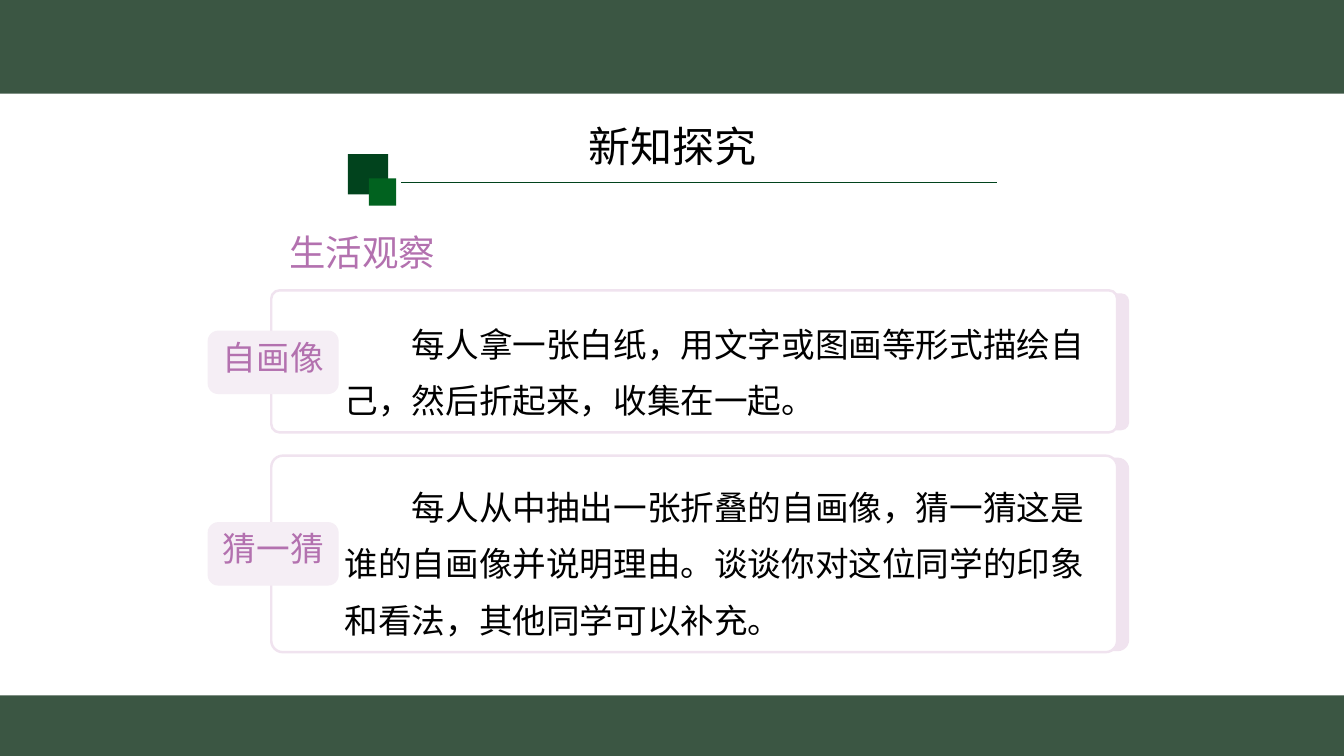
import pptx
import pptx.dml.color
import pptx.enum.shapes
import pptx.enum.text
import pptx.oxml.ns
import pptx.util
from lxml import etree

Inches, Pt = pptx.util.Inches, pptx.util.Pt
SHAPE = pptx.enum.shapes.MSO_SHAPE
ALIGN = pptx.enum.text.PP_ALIGN

COLORS = {
    "band": "3B5643", "dark": "01431D", "green": "01621F", "white": "FFFFFF",
    "black": "000000", "lilac": "F0E3EF", "tag": "F5EEF5", "purple": "B371AF",
}
CJK = "Noto Sans CJK SC"
WIDTH, HEIGHT = 13.33, 7.5


def rgb(name):
    return pptx.dml.color.RGBColor.from_string(COLORS[name])


class SlideBuilder:
    """Holds the shared style and the slide being filled."""

    def __init__(self, slide):
        self.s = slide

    def box(self, at, fill, adj=None, line=None):
        """Rectangle, rounded when adj is given."""
        kind = SHAPE.RECTANGLE if adj is None else SHAPE.ROUNDED_RECTANGLE
        sp = self.s.shapes.add_shape(kind, *map(Inches, at))
        sp.shadow.inherit = False
        if adj is not None:
            sp.adjustments[0] = adj
        sp.fill.solid()
        sp.fill.fore_color.rgb = rgb(fill)
        if line:
            sp.line.color.rgb = rgb(line)
            sp.line.width = Pt(1.75)
        else:
            sp.line.fill.background()

    def rule(self, x1, x2, y):
        c = self.s.shapes.add_connector(
            pptx.enum.shapes.MSO_CONNECTOR.STRAIGHT,
            *map(Inches, (x1, y, x2, y)))
        c.line.color.rgb = rgb("dark")
        c.line.width = Pt(1)
        etree.SubElement(c._element.spPr, pptx.oxml.ns.qn("a:effectLst"))

    def text(self, at, words, size, color="black", font=CJK, inset=(0, 0),
             indent=0, **paragraph):
        """Text box; indent counts characters on the first line."""
        tf = self.s.shapes.add_textbox(*map(Inches, at)).text_frame
        dx, dy = map(Inches, inset)
        frame = {"word_wrap": True, "margin_left": dx, "margin_right": dx,
                 "margin_top": dy, "margin_bottom": dy}
        for name, value in frame.items():
            setattr(tf, name, value)
        p = tf.paragraphs[0]
        for name, value in paragraph.items():
            setattr(p, name, value)
        if indent:
            p._p.get_or_add_pPr().set("indent", str(Pt(indent * size)))
        r = p.add_run()
        r.text = words
        for name, value in {"size": Pt(size), "name": font}.items():
            setattr(r.font, name, value)
        r.font.color.rgb = rgb(color)
        ea = etree.SubElement(r._r.get_or_add_rPr(), pptx.oxml.ns.qn("a:ea"))
        ea.set("typeface", CJK)

    def card(self, top, height, back, text_at, tag_top, tag, words):
        """Bordered panel over a lilac backing, with a tag on its left edge."""
        self.box((2.73, back[0], 8.47, back[1]), "lilac", 0.059)
        self.box((2.69, top, 8.39, height), "white", 0.059, "lilac")
        self.text(text_at, words, 24, inset=(0.1, 0.05), indent=2,
                  line_spacing=1.4)
        self.box((2.06, tag_top, 1.3, 0.63), "tag", 0.167)
        self.text((2.04, tag_top + 0.06, 1.34, 0.51), tag, 24, "purple",
                  "Times New Roman", alignment=ALIGN.CENTER)


def main():
    prs = pptx.Presentation()
    prs.slide_width, prs.slide_height = Inches(WIDTH), Inches(HEIGHT)
    b = SlideBuilder(prs.slides.add_slide(prs.slide_layouts[6]))

    b.box((0, 0, WIDTH, 0.93), "band")
    b.box((0, 6.9, WIDTH, 0.6), "band")

    b.rule(3.98, 9.89, 1.81)
    b.box((3.45, 1.53, 0.4, 0.4), "dark")
    b.box((3.66, 1.77, 0.27, 0.27), "green")
    b.text((2.18, 1.25, 8.98, 0.63), "新知探究", 30,
           alignment=ALIGN.CENTER, line_spacing=0.9)
    b.text((2.05, 1.97, 11.28, 0.72), "生活观察", 26, "purple",
           inset=(0.1, 0.05), indent=2, line_spacing=1.6)

    b.card(2.88, 1.41, (2.91, 1.36), (3.32, 3, 7.64, 1.23), 3.28, "自画像",
           "每人拿一张白纸，用文字或图画等形式描绘自己，然后折起来，收集在一起。")
    b.card(4.52, 1.95, (4.54, 1.92), (3.32, 4.62, 7.76, 1.75), 5.18, "猜一猜",
           "每人从中抽出一张折叠的自画像，猜一猜这是谁的自画像并说明理由。"
           "谈谈你对这位同学的印象和看法，其他同学可以补充。")

    prs.save("out.pptx")


if __name__ == "__main__":
    main()
